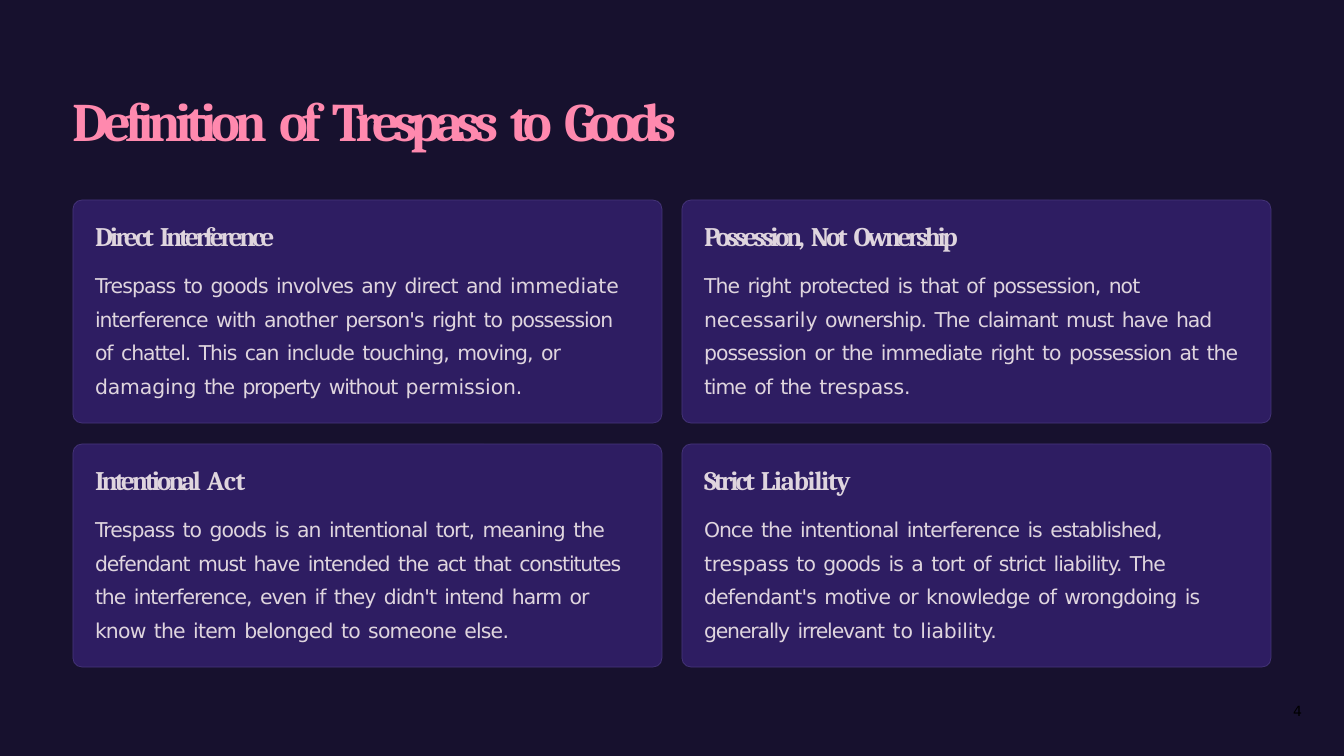
"""Build the slide that defines trespass to goods in four cards."""
from dataclasses import dataclass
from typing import Any, NamedTuple

from lxml.etree import SubElement
from pptx import Presentation
from pptx.dml.color import RGBColor
from pptx.enum.shapes import MSO_SHAPE
from pptx.enum.text import MSO_ANCHOR, MSO_AUTO_SIZE, PP_ALIGN
from pptx.oxml.ns import qn
from pptx.util import Emu, Pt

SCALE = 914400 / 84
FULL_W, FULL_H = 1344, 756
LEFT, TOP = 73, 200
WIDE, HIGH = 589, 223
STEP_X, STEP_Y = 609, 244
PAD_X, PAD_Y = 22, 20

NIGHT, PANEL, EDGE = "0B0523", "2E1D62", "47367B"
PINK, PALE, BLACK = "FF89AE", "DFD5DE", "000000"

FRAME = {"margin_left": 0, "margin_right": 0, "margin_top": 0, "margin_bottom": 0,
         "word_wrap": True, "auto_size": MSO_AUTO_SIZE.NONE,
         "vertical_anchor": MSO_ANCHOR.TOP}


class Span(NamedTuple):
    text: str
    space: float


class Style(NamedTuple):
    color: str
    gap: float
    font: dict[str, Any]
    para: dict[str, Any]


@dataclass
class Card:
    width: int
    head: list[Span]
    body: list[Span]


TITLE = Style(PINK, 0, {"name": "Cambria", "size": Pt(46.5), "bold": True},
              {"alignment": PP_ALIGN.LEFT, "line_spacing": 1.0, "space_before": Pt(1.1)})
HEAD = Style(PALE, 0, {"name": "Cambria", "size": Pt(23), "bold": True},
             {"alignment": PP_ALIGN.LEFT, "line_spacing": 1.0, "space_before": Pt(1.1)})
BODY = Style(PALE, 0.8, {"name": "DejaVu Sans", "size": Pt(17.5), "bold": False},
             {"alignment": PP_ALIGN.LEFT, "line_spacing": 1.38, "space_before": Pt(9.9)})
PAGE = Style(BLACK, 0, {"name": "DejaVu Sans", "size": Pt(12), "bold": False},
             {"alignment": PP_ALIGN.RIGHT, "line_spacing": 1.0, "space_before": Pt(0)})

NAME = [Span("Definition ", -4.9), Span("of ", -4.8), Span("Trespass ", -5.8),
        Span("to ", -4.8), Span("Goods", -6.7)]

CARDS = [
    Card(528, [Span("Direct ", -2.5), Span("Interference", -2.9)], [
        Span("Trespass to goods involves any direct and ", -0.76),
        Span("immediate ", -0.1),
        Span("interference with another person's right to possession ", -0.86),
        Span("of chattel. This can include touching, moving, or ", -0.87),
        Span("damaging ", -0.1), Span("the property without ", -1.06),
        Span("permission.", -0.1)]),
    Card(542, [Span("Possession, ", -3), Span("Not ", -2.5), Span("Ownership", -3)], [
        Span("The right protected is that of possession, not ", -0.82),
        Span("necessarily ", -0.1),
        Span("ownership. The claimant must have had ", -0.94),
        Span("possession or the immediate right to possession at the ", -0.83),
        Span("time of the ", -0.92), Span("trespass.", -0.1)]),
    Card(532, [Span("Intentional ", -2.6), Span("Act", -0.2)], [
        Span("Trespass to goods is an intentional tort, meaning the ", -0.88),
        Span("defendant must have intended the act that constitutes ", -0.97),
        Span("the interference, even if they didn't intend harm or ", -0.87),
        Span("know the item belonged to someone else.", -0.72)]),
    Card(532, [Span("Strict ", -2.4), Span("Liability", -1.2)], [
        Span("Once the intentional interference is established, ", -0.87),
        Span("trespass ", -0.1),
        Span("to goods is a tort of strict liability. The ", -0.83),
        Span("defendant's motive or knowledge of wrongdoing is ", -0.69),
        Span("generally irrelevant ", -1), Span("to liability.", -0.12)]),
]


def px(count: int) -> Emu:
    return Emu(round(count * SCALE))


def tint(code: str) -> RGBColor:
    return RGBColor.from_string(code)


def apply(target: Any, values: dict[str, Any]) -> None:
    for key, value in values.items():
        setattr(target, key, value)


def place(shape: Any, x: int, y: int, w: int, h: int) -> None:
    apply(shape, {"left": px(x), "top": px(y), "width": px(w), "height": px(h)})


def write(shape: Any, parts: list[tuple[Style, list[Span]]]) -> None:
    frame = shape.text_frame
    apply(frame, FRAME)
    for i, (style, spans) in enumerate(parts):
        para = frame.add_paragraph() if i else frame.paragraphs[0]
        apply(para, style.para)
        props = para._p.get_or_add_pPr()
        props.set("marL", "0")
        props.set("indent", "0")
        SubElement(props, qn("a:buNone"))
        for span in spans:
            for word, blank, _ in iter_words(span.text):
                for text, space in ((word, span.space), (blank, style.gap)):
                    if text:
                        add_run(para, style, text, space)


def iter_words(text: str) -> list[tuple[str, str, str]]:
    words = []
    while text:
        word, blank, text = text.partition(" ")
        words.append((word, blank, text))
    return words


def add_run(para: Any, style: Style, text: str, space: float) -> None:
    run = para.add_run()
    run.text = text
    apply(run.font, style.font)
    run.font.color.rgb = tint(style.color)
    run._r.get_or_add_rPr().set("spc", str(round(space * 100)))


def block(slide: Any, kind: MSO_SHAPE, color: str, front: Any,
          x: int, y: int, w: int, h: int) -> Any:
    shape = slide.shapes.add_shape(kind, px(x), px(y), px(w), px(h))
    shape.shadow.inherit = False
    shape.fill.solid()
    shape.fill.fore_color.rgb = tint(color)
    shape.line.fill.background()
    front.element.addprevious(shape.element)
    return shape


def draw(slide: Any, holder: Any, card: Card, x: int, y: int) -> None:
    panel = block(slide, MSO_SHAPE.ROUNDED_RECTANGLE, PANEL, holder, x, y, WIDE, HIGH)
    panel.adjustments[0] = 0.04
    panel.line.color.rgb = tint(EDGE)
    panel.line.width = Pt(0.6)
    place(holder, x + PAD_X, y + PAD_Y, card.width, HIGH - 2 * PAD_Y)
    write(holder, [(HEAD, card.head), (BODY, card.body)])


def main() -> None:
    deck = Presentation()
    apply(deck, {"slide_width": px(FULL_W), "slide_height": px(FULL_H)})
    slide = deck.slides.add_slide(deck.slide_layouts.get_by_name("Comparison"))

    title, *holders = slide.placeholders
    veil = block(slide, MSO_SHAPE.RECTANGLE, NIGHT, title, 0, 0, FULL_W, FULL_H)
    shade = veil.element.spPr.find(qn("a:solidFill"))[0]
    SubElement(shade, qn("a:alpha")).set("val", "95000")

    place(title, LEFT, 87, 1159, 103)
    write(title, [(TITLE, NAME)])
    for i, (holder, card) in enumerate(zip(holders, CARDS)):
        row, col = divmod(i, 2)
        draw(slide, holder, card, LEFT + col * STEP_X, TOP + row * STEP_Y)

    page = slide.shapes.add_textbox(px(1262), px(703), px(40), px(20))
    write(page, [(PAGE, [Span("4", 0)])])
    deck.save("out.pptx")


if __name__ == "__main__":
    main()
